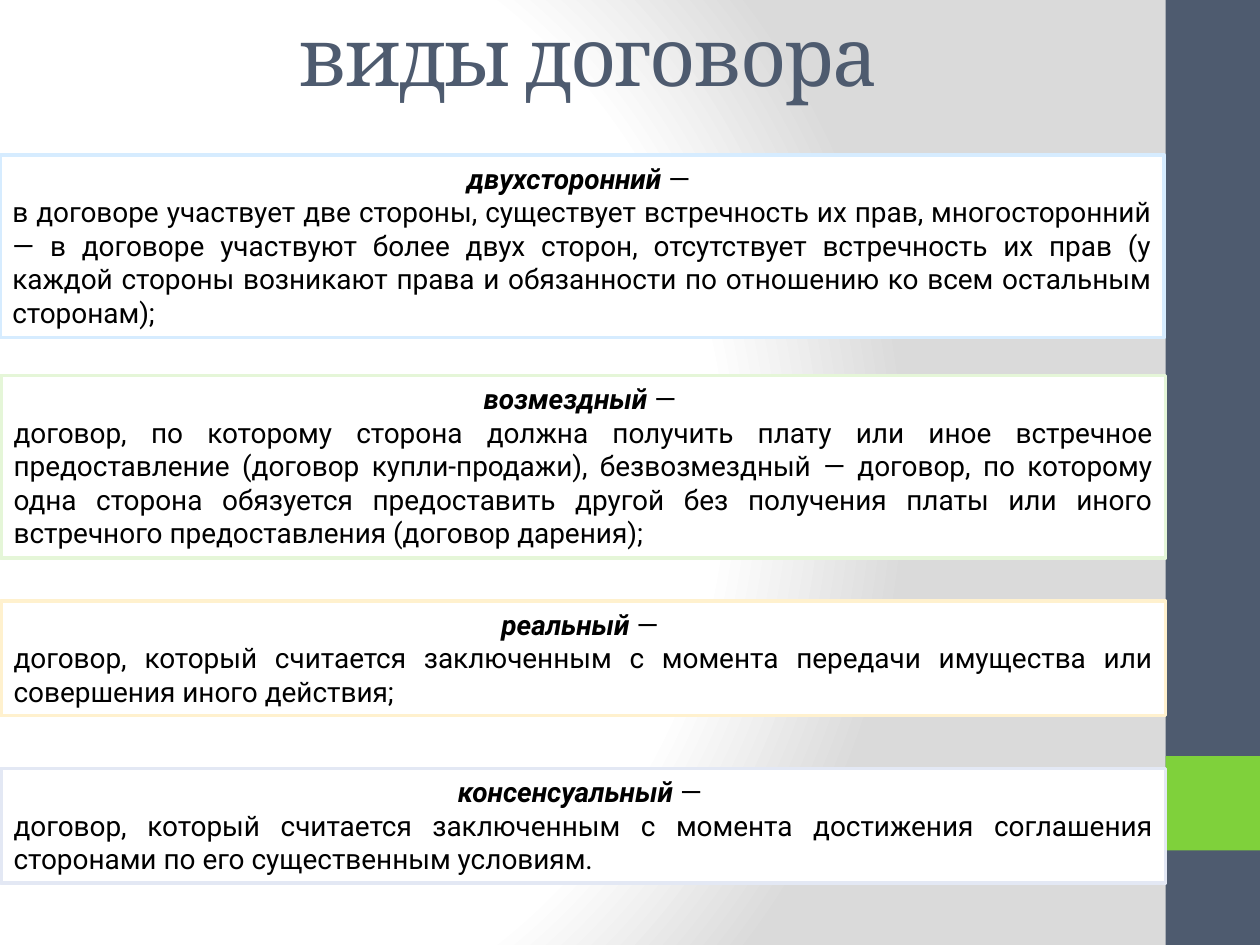
from pptx import Presentation
from pptx.dml.color import RGBColor
from pptx.enum.shapes import MSO_SHAPE
from pptx.enum.text import MSO_ANCHOR, MSO_AUTO_SIZE, PP_ALIGN
from pptx.oxml import parse_xml
from pptx.oxml.ns import nsdecls, qn
from pptx.util import Inches, Pt

SLATE, GREEN, WHITE, BLACK = "4E5B6F", "7FD13B", "FFFFFF", "000000"
GRADIENT_STOPS = [(0, WHITE), (75, WHITE), (100, "DADADA")]

# left, top, height, outline, term, definition
CONTRACTS = [
    (0, 1.23, 1.45, "D6ECFF", "двухсторонний",
     "в договоре участвует две стороны, существует встречность их прав, "
     "многосторонний — в договоре участвуют более двух сторон, отсутствует "
     "встречность их прав (у каждой стороны возникают права и обязанности "
     "по отношению ко всем остальным сторонам);"),
    (0.01, 2.98, 1.45, "E5F6D8", "возмездный",
     "договор, по которому сторона должна получить плату или иное встречное "
     "предоставление (договор купли-продажи), безвозмездный — договор, по "
     "которому одна сторона обязуется предоставить другой без получения "
     "платы или иного встречного предоставления (договор дарения);"),
    (0.01, 4.77, 0.91, "FFF1CE", "реальный",
     "договор, который считается заключенным с момента передачи имущества "
     "или совершения иного действия;"),
    (0.01, 6.1, 0.91, "E3E8F4", "консенсуальный",
     "договор, который считается заключенным с момента достижения соглашения "
     "сторонами по его существенным условиям."),
]


def rgb(color):
    return RGBColor.from_string(color)


class SlideBuilder:
    title_font, body_font = "Cambria", "Roboto"
    title_size, body_size = Pt(46), Pt(16)

    def __init__(self, prs):
        self.s = prs.slides.add_slide(prs.slide_layouts[5])

    def background(self, stops):
        """Fill the background with a radial gradient."""
        self.s.background.fill.solid()
        solid = next(self.s.element.iter(qn("a:solidFill")))
        stop_xml = "".join(
            f'<a:gs pos="{pos * 1000}"><a:srgbClr val="{color}"/></a:gs>'
            for pos, color in stops)
        gradient = parse_xml(
            f'<a:gradFill {nsdecls("a")} rotWithShape="1">'
            f'<a:gsLst>{stop_xml}</a:gsLst><a:path path="circle">'
            '<a:fillToRect l="20000" t="50000" r="100000" b="50000"/>'
            '</a:path></a:gradFill>')
        solid.getparent().replace(solid, gradient)

    def rect(self, left, top, width, height, fill, outline=None):
        sp = self.s.shapes.add_shape(
            MSO_SHAPE.RECTANGLE, Inches(left), Inches(top),
            Inches(width), Inches(height))
        sp.shadow.inherit = False
        sp.fill.solid()
        sp.fill.fore_color.rgb = rgb(fill)
        if outline:
            sp.line.color.rgb = rgb(outline)
            sp.line.width = Pt(2)
        else:
            sp.line.fill.background()
        return sp

    def style(self, p, align, font, size, color):
        p.alignment = align
        p.font.name = font
        p.font.size = size
        p.font.color.rgb = rgb(color)

    def title(self, text, left, top, width, height):
        sp = self.s.shapes.title
        sp.left, sp.top = Inches(left), Inches(top)
        sp.width, sp.height = Inches(width), Inches(height)
        tf = sp.text_frame
        tf.auto_size = MSO_AUTO_SIZE.NONE
        tf.vertical_anchor = MSO_ANCHOR.MIDDLE
        p = tf.paragraphs[0]
        r = p.add_run()
        r.text = text
        self.style(p, PP_ALIGN.CENTER, self.title_font, self.title_size, SLATE)
        r.font._element.set("spc", "-100")

    def definition(self, left, top, height, outline, term, text):
        """Add an outlined box with a centred term above its definition."""
        sp = self.rect(left, top, 9.24, height, WHITE, outline)
        tf = sp.text_frame
        tf.word_wrap = True
        tf.auto_size = MSO_AUTO_SIZE.SHAPE_TO_FIT_TEXT
        tf.vertical_anchor = MSO_ANCHOR.TOP
        heading, body = tf.paragraphs[0], tf.add_paragraph()
        r = heading.add_run()
        r.text = f"{term} "
        r.font.bold = r.font.italic = True
        heading.add_run().text = "— "
        body.add_run().text = text
        for p, align in ((heading, PP_ALIGN.CENTER), (body, PP_ALIGN.JUSTIFY)):
            self.style(p, align, self.body_font, self.body_size, BLACK)


def main():
    prs = Presentation()
    prs.slide_width, prs.slide_height = Inches(10), Inches(7.5)
    slide = SlideBuilder(prs)
    slide.background(GRADIENT_STOPS)
    slide.rect(9.25, 0, 0.75, 7.5, SLATE)
    slide.rect(9.25, 6, 0.75, 0.75, GREEN)
    slide.title("виды договора", 0.51, -0.19, 8.33, 1.25)
    for contract in CONTRACTS:
        slide.definition(*contract)
    prs.save("out.pptx")


if __name__ == "__main__":
    main()
